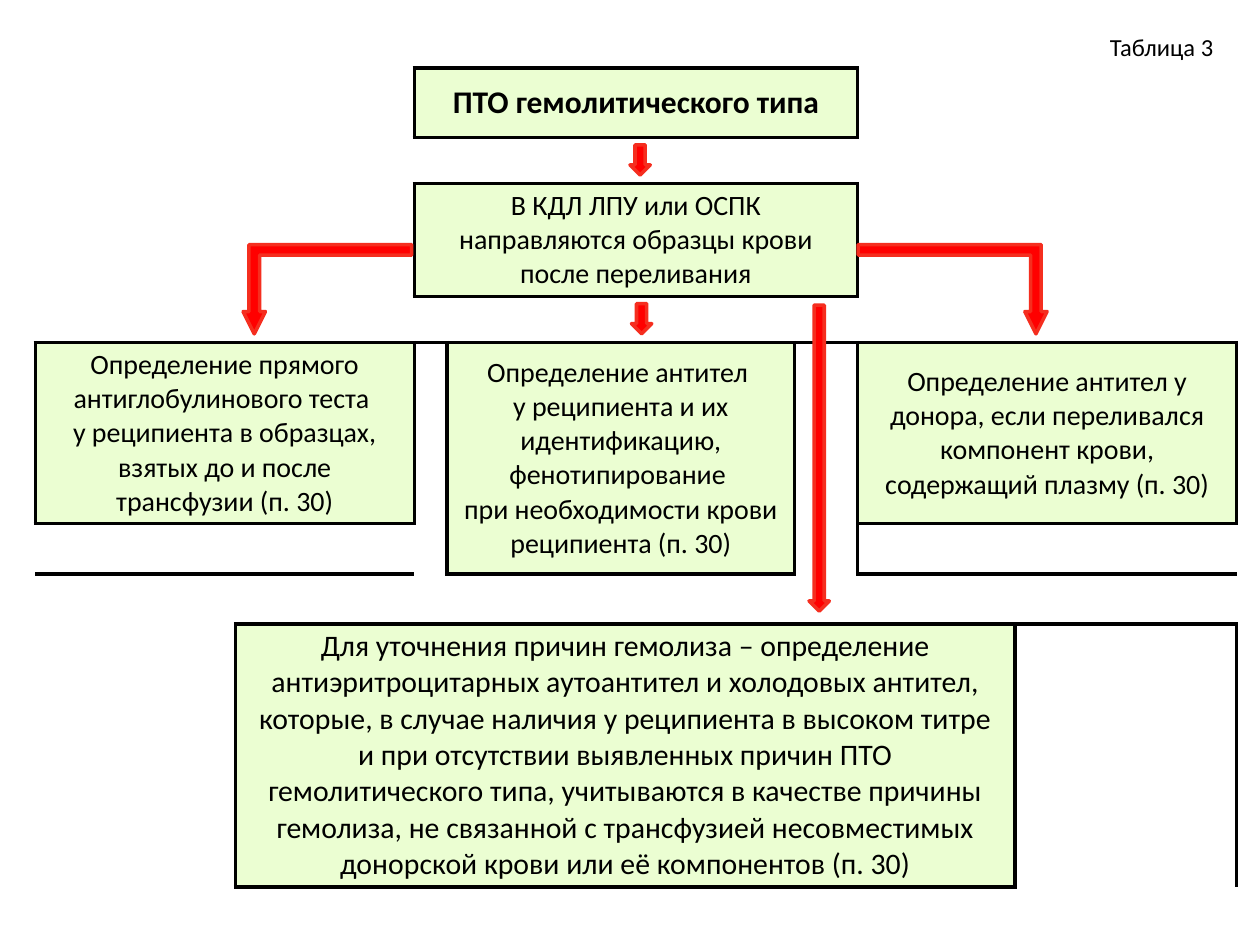
from lxml import etree
from pptx import Presentation, util as u
from pptx.dml.color import RGBColor
from pptx.enum import shapes, text
from pptx.oxml.ns import qn

COLORS = {"box": "EBFED2", "blank": "FFFFFF", "ink": "000000",
          "arrow": "FF0000", "arrow_line": "F52E1F"}
COLUMN_WIDTHS = [4.04, 0.81, 2.79, 0.64, 7.01, 1.27, 2.79, 0.38, 4.47]
ROW_HEIGHTS = [1.4, 0.93, 2.28, 0.93, 3.65, 1.01, 1.01, 5.3]
BORDER_SIDES = [("a:lnL", 0, -1), ("a:lnR", 0, 1), ("a:lnT", -1, 0), ("a:lnB", 1, 0)]
CELL_FORMAT = {"vertical_anchor": text.MSO_ANCHOR.MIDDLE,
               "margin_left": u.Cm(0.28), "margin_right": u.Cm(0.28),
               "margin_top": u.Cm(0.07), "margin_bottom": u.Cm(0.07)}

BOXES = [
    (0, 3, 0, 5, 18, True, ["ПТО гемолитического типа"]),
    (2, 3, 2, 5, 16, False,
     ["В КДЛ ЛПУ или ОСПК направляются образцы крови после переливания"]),
    (4, 0, 4, 2, 16, False,
     ["Определение прямого антиглобулинового теста ",
      "у реципиента в образцах, взятых до и после трансфузии (п. 30)"]),
    (4, 4, 5, 4, 16, False,
     ["Определение антител ",
      "у реципиента и их идентификацию, фенотипирование ",
      "при необходимости крови реципиента (п. 30)"]),
    (4, 6, 4, 8, 16, False,
     ["Определение антител у донора, если переливался компонент крови, "
      "содержащий плазму (п. 30)"]),
    (7, 1, 7, 7, 17, False,
     ["Для уточнения причин гемолиза – определение антиэритроцитарных аутоантител "
      "и холодовых антител, которые, в случае наличия у реципиента в высоком титре "
      "и при отсутствии выявленных причин ПТО гемолитического типа, учитываются "
      "в качестве причины гемолиза, не связанной с трансфузией несовместимых "
      "донорской крови или её компонентов (п. 30)"]),
]
BLANK_SPANS = [(row, *columns) for row in range(4) for columns in ((0, 1), (7, 8))]
BLANK_SPANS += [(row, *columns) for row in (5, 6) for columns in ((0, 2), (6, 8))]
BLANK_SPANS += [(1, 3, 5), (3, 3, 5)]

DOWN = shapes.MSO_SHAPE.DOWN_ARROW
BENT = shapes.MSO_SHAPE.BENT_UP_ARROW
ARROWS = [
    (DOWN, 12.7, 2.92, 0.41, 0.61, False),
    (DOWN, 12.73, 6.12, 0.41, 0.61, False),
    (BENT, 4.9, 4.93, 3.4, 1.8, False),
    (BENT, 17.3, 4.93, 3.81, 1.8, True),
    (DOWN, 16.31, 6.15, 0.41, 6.17, False),
]


def write_paragraphs(frame, lines, alignment, size, bold):
    font_format = {"name": "Calibri", "size": u.Pt(size), "bold": bold}
    for index, line in enumerate(lines):
        paragraph = frame.add_paragraph() if index else frame.paragraphs[0]
        paragraph.alignment = alignment
        run = paragraph.add_run()
        run.text = line
        run.font.color.rgb = RGBColor.from_string(COLORS["ink"])
        for name, value in font_format.items():
            setattr(run.font, name, value)


presentation = Presentation()
presentation.slide_width, presentation.slide_height = u.Cm(25.4), u.Cm(19.05)
slide = presentation.slides.add_slide(presentation.slide_layouts[6])

caption = slide.shapes.add_textbox(u.Cm(0.71), u.Cm(0.53), u.Cm(24), u.Cm(0.86))
caption.text_frame.word_wrap = True
write_paragraphs(caption.text_frame, ["Таблица 3"], text.PP_ALIGN.RIGHT, 14, False)

table_frame = slide.shapes.add_table(
    len(ROW_HEIGHTS), len(COLUMN_WIDTHS), u.Cm(0.71), u.Cm(1.37),
    u.Cm(sum(COLUMN_WIDTHS)), u.Cm(sum(ROW_HEIGHTS)))
table = table_frame.table
table.first_row = table.horz_banding = False
style = table_frame._element.find(".//" + qn("a:tableStyleId"))
style.text = "{2D5ABB26-0587-4C30-8999-92F81FD0307C}"
for column, width in zip(table.columns, COLUMN_WIDTHS):
    column.width = u.Cm(width)
for row, height in zip(table.rows, ROW_HEIGHTS):
    row.height = u.Cm(height)

boxed = set()
for top, left, bottom, right, size, bold, lines in BOXES:
    boxed.update((row, column) for row in range(top, bottom + 1)
                 for column in range(left, right + 1))
    cell = table.cell(top, left)
    cell.merge(table.cell(bottom, right))
    write_paragraphs(cell.text_frame, lines, text.PP_ALIGN.CENTER, size, bold)
for row, left, right in BLANK_SPANS:
    table.cell(row, left).merge(table.cell(row, right))

for row in range(len(ROW_HEIGHTS)):
    for column in range(len(COLUMN_WIDTHS)):
        cell = table.cell(row, column)
        is_box = (row, column) in boxed
        for name, value in CELL_FORMAT.items():
            setattr(cell, name, value)
        cell.fill.solid()
        cell.fill.fore_color.rgb = RGBColor.from_string(COLORS["box" if is_box else "blank"])
        properties = cell._tc.get_or_add_tcPr()
        position = 0
        for tag, row_step, column_step in BORDER_SIDES:
            if is_box or (row + row_step, column + column_step) in boxed:
                border = etree.Element(qn(tag), w=str(u.Pt(2.25)))
                fill = etree.SubElement(border, qn("a:solidFill"))
                etree.SubElement(fill, qn("a:srgbClr"), val=COLORS["ink"])
                properties.insert(position, border)
                position += 1

for kind, left, top, width, height, flipped in ARROWS:
    arrow = slide.shapes.add_shape(kind, u.Cm(left), u.Cm(top), u.Cm(width), u.Cm(height))
    arrow.shadow.inherit = False
    arrow.fill.solid()
    arrow.fill.fore_color.rgb = RGBColor.from_string(COLORS["arrow"])
    arrow.line.color.rgb = RGBColor.from_string(COLORS["arrow_line"])
    arrow.line.width = u.Pt(2)
    if kind == BENT:
        arrow.rotation = 180
        for index, value in enumerate([0.118, 0.125, 0.25]):
            arrow.adjustments[index] = value
    if flipped:
        arrow._element.spPr.xfrm.set("flipH", "1")

presentation.save("out.pptx")
